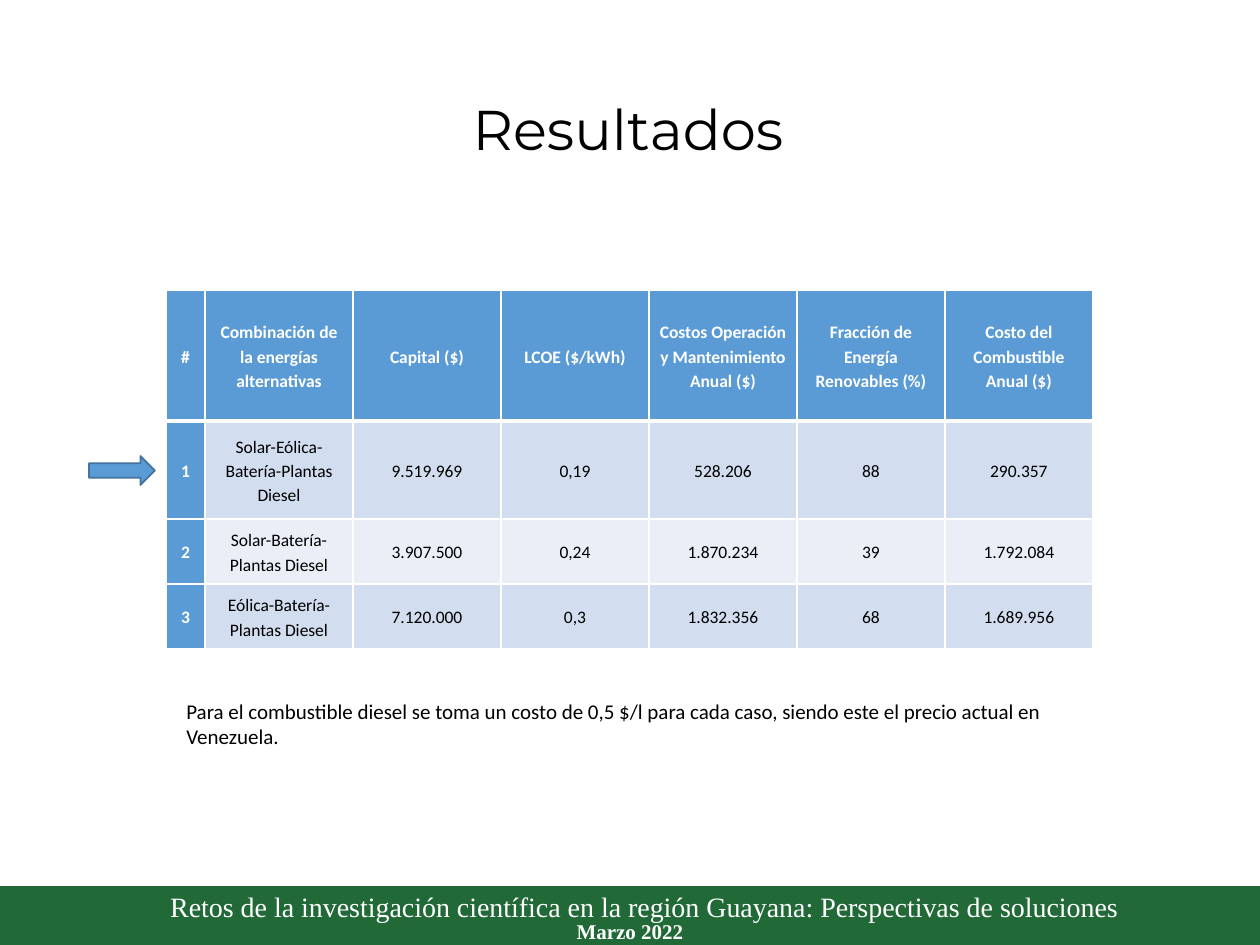
from lxml.etree import SubElement
from pptx import Presentation
from pptx.dml.color import RGBColor
from pptx.enum.shapes import MSO_SHAPE
from pptx.enum.text import MSO_ANCHOR, PP_ALIGN
from pptx.oxml.ns import qn
from pptx.util import Pt

TITLE = "Resultados"
HEAD = ["#", "Combinación de la energías alternativas", "Capital ($)",
        "LCOE ($/kWh)", "Costos Operación y Mantenimiento Anual ($)",
        "Fracción de Energía Renovables (%)", "Costo del Combustible Anual ($)"]
CASES = [
    ["1", "Solar-Eólica-Batería-Plantas Diesel", "9.519.969", "0,19", "528.206", "88", "290.357"],
    ["2", "Solar-Batería-Plantas Diesel", "3.907.500", "0,24", "1.870.234", "39", "1.792.084"],
    ["3", "Eólica-Batería-Plantas Diesel", "7.120.000", "0,3", "1.832.356", "68", "1.689.956"],
]
NOTE = ("Para el combustible diesel se toma un costo de 0,5 $/l para cada caso, "
        "siendo este el precio actual en Venezuela.")
EVENT = "Retos de la investigación científica en la región Guayana: Perspectivas de soluciones"
DATE = "Marzo 2022"

COLS = [39] + [148] * 6
ROWS = [131, 98, 65, 65]
BLUE, WHITE, BLACK, GREEN = "5B9BD5", "FFFFFF", "000000", "216A38"
BANDS = ["D2DEEF", "EAEFF7"]
SERIF = "Times New Roman"


def px(n):
    return round(n * 914400 / 126)


def rgb(code):
    return RGBColor.from_string(code)


def write(frame, text, size, font, color, bold=False, align=PP_ALIGN.LEFT, space=None):
    frame.text = text
    para = frame.paragraphs[0]
    para.alignment = align
    para.line_spacing = space
    style = para.runs[0].font
    style.size, style.name, style.bold = Pt(size), font, bold
    style.color.rgb = rgb(color)


def label(slide, box, *args, **opts):
    frame = slide.shapes.add_textbox(*map(px, box)).text_frame
    frame.word_wrap = True
    write(frame, *args, **opts)


def shape(slide, kind, box, fill, line=None):
    item = slide.shapes.add_shape(kind, *map(px, box))
    item.shadow.inherit = False
    item.fill.solid()
    item.fill.fore_color.rgb = rgb(fill)
    if line:
        item.line.color.rgb = rgb(line)
        item.line.width = Pt(1)
    else:
        item.line.fill.background()


def edge(cell, **widths):
    """Draw white cell borders; call before the fill is set, as XML order matters."""
    props = cell._tc.get_or_add_tcPr()
    for side, width in widths.items():
        line = SubElement(props, qn("a:ln" + side), w=str(Pt(width)))
        fill = SubElement(line, qn("a:solidFill"))
        SubElement(fill, qn("a:srgbClr"), val=WHITE)


def grid(slide):
    data = [HEAD] + CASES
    table = slide.shapes.add_table(
        len(ROWS), len(COLS), px(166), px(290), px(sum(COLS)), px(sum(ROWS))).table
    for col, width in zip(table.columns, COLS):
        col.width = px(width)
    for r, (row, height) in enumerate(zip(table.rows, ROWS)):
        row.height = px(height)
        for c, cell in enumerate(row.cells):
            key = r == 0 or c == 0
            edge(cell, L=1, R=1, T=3 if r == 1 else 1, B=3 if r == 0 else 1)
            cell.fill.solid()
            cell.fill.fore_color.rgb = rgb(BLUE if key else BANDS[(r - 1) % 2])
            cell.vertical_anchor = MSO_ANCHOR.MIDDLE
            cell.margin_left = cell.margin_right = px(9)
            cell.margin_top = cell.margin_bottom = 0
            write(cell.text_frame, data[r][c], 10, "Calibri",
                  WHITE if key else BLACK, key, PP_ALIGN.CENTER, 1.15)


def main():
    deck = Presentation()
    deck.slide_width, deck.slide_height = px(1260), px(945)
    slide = deck.slides.add_slide(deck.slide_layouts[5])

    title = slide.shapes.title
    title.left, title.top, title.width, title.height = map(px, (460, 96, 369, 73))
    write(title.text_frame, TITLE, 32, "Montserrat", BLACK, space=Pt(34))
    title.text_frame.word_wrap = False
    title.text_frame.vertical_anchor = MSO_ANCHOR.TOP

    shape(slide, MSO_SHAPE.RECTANGLE, (0, 886, 1260, 59), GREEN)
    label(slide, (52, 889, 1185, 72), EVENT, 16, SERIF, WHITE,
          align=PP_ALIGN.CENTER, space=Pt(16))
    label(slide, (315, 911, 630, 39), DATE, 12, SERIF, WHITE, bold=True,
          align=PP_ALIGN.CENTER, space=Pt(15))
    grid(slide)
    label(slide, (174, 692, 968, 63), NOTE, 12, "Calibri", BLACK)
    shape(slide, MSO_SHAPE.RIGHT_ARROW, (89, 456, 66, 29), BLUE, "43739E")
    deck.save("out.pptx")


if __name__ == "__main__":
    main()
